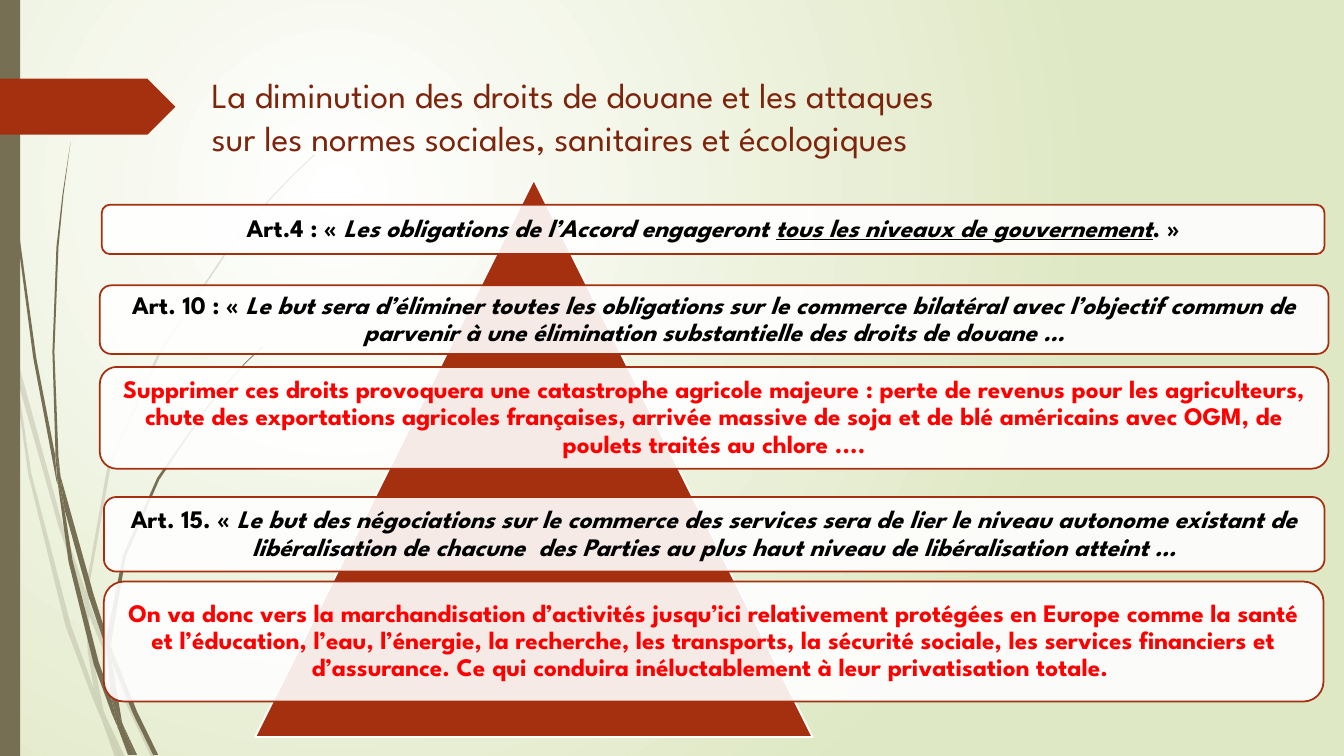
from lxml import etree
from pptx import Presentation
from pptx.dml.color import RGBColor
from pptx.enum.shapes import MSO_SHAPE
from pptx.enum.text import MSO_ANCHOR, PP_ALIGN
from pptx.oxml.ns import qn
from pptx.util import Pt

RECTANGLE = MSO_SHAPE.RECTANGLE
TRIANGLE = MSO_SHAPE.ISOSCELES_TRIANGLE
ROUNDED = MSO_SHAPE.ROUNDED_RECTANGLE
ARROW_TAB = MSO_SHAPE.PENTAGON
MIDDLE = MSO_ANCHOR.MIDDLE
CENTER = PP_ALIGN.CENTER

WHITE = RGBColor(0xFF, 0xFF, 0xFF)
BLACK = RGBColor(0x00, 0x00, 0x00)
RED = RGBColor(0xFF, 0x00, 0x00)
RUST = RGBColor(0xA5, 0x30, 0x10)
DARK_RUST = RGBColor(0x7C, 0x24, 0x0C)
OLIVE = RGBColor(0x76, 0x6F, 0x54)
PALE_GREEN = RGBColor(0xDF, 0xE8, 0xC4)

FONT = "League Spartan"
GRASS_UNIT = Pt(0.72)  # the grass outlines are on a grid of this step

# Grass blades, as outlines on the grid
PALE_BLADES = [
    [(11, 350), (9, 322), (0, 282), (0, 299), (10, 344)],
    [(58, 522), (84, 599), (85, 586), (62, 520), (14, 345), (17, 376)],
    [(92, 607), (88, 596), (88, 610), (123, 694), (150, 751), (155, 751), (127, 692)],
    [(119, 751), (124, 751), (105, 711)],
    [(93, 683), (70, 619), (31, 469), (17, 376), (11, 350), (28, 470), (65, 621),
     (92, 693), (101, 714), (99, 707)],
    [(84, 599), (87, 646), (93, 683), (96, 692), (105, 711), (103, 706), (91, 646),
     (88, 610), (88, 608)],
    [(88, 584), (110, 462), (160, 349), (229, 245), (268, 198), (290, 175), (312, 154),
     (312, 153), (289, 175), (268, 197), (228, 244), (158, 348), (107, 461), (85, 584),
     (85, 586), (88, 596)],
    [(101, 714), (114, 751), (119, 751)],
    [(88, 608), (88, 610), (88, 596), (85, 586), (84, 599)],
    [(96, 692), (93, 683), (99, 707), (101, 714), (119, 751), (105, 711)],
]
DARK_BLADES = [
    [(7, 110), (17, 233), (33, 355), (56, 477), (57, 481), (55, 457), (55, 453),
     (36, 355), (19, 232), (8, 109), (5, 48), (4, 0), (3, 0), (4, 48)],
    [(88, 592), (106, 645), (106, 633), (106, 631), (93, 590), (60, 472), (64, 505)],
    [(113, 649), (110, 641), (111, 656), (132, 708), (152, 749), (157, 749), (136, 706)],
    [(110, 691), (98, 657), (72, 556), (64, 505), (57, 477), (68, 557), (93, 659),
     (111, 708), (117, 722), (116, 717)],
    [(60, 472), (58, 453), (54, 349), (58, 245), (63, 193), (70, 141), (62, 193),
     (56, 245), (52, 349), (55, 449)],
    [(133, 749), (136, 749), (122, 719)],
    [(57, 477), (64, 505), (60, 472), (55, 449), (55, 453)],
    [(111, 633), (125, 552), (158, 476), (205, 406), (231, 374), (245, 359), (261, 344),
     (260, 344), (245, 358), (231, 373), (204, 405), (156, 474), (122, 551), (106, 631),
     (110, 641)],
    [(117, 722), (127, 749), (131, 749)],
    [(106, 645), (110, 691), (116, 706), (122, 719), (121, 716), (111, 656), (109, 651)],
    [(106, 645), (109, 651), (111, 656), (110, 641), (106, 631), (106, 633)],
    [(116, 706), (110, 691), (116, 717), (117, 722), (130, 749), (133, 749), (122, 719)],
]

# Panels: left, top, width, height, text colour, spans of text with their format
PANELS = [
    (72.7, 146.2, 873.4, 35.3, BLACK, [
        ("Art.4 : « ", {}),
        ("Les obligations de l’Accord engageront ", {"italic": True}),
        ("tous les niveaux de gouvernement", {"italic": True, "underline": True}),
        (". »", {})]),
    (71.3, 203.8, 877.7, 49, BLACK, [
        ("Art. 10 : «", {}),
        (" Le but sera d’éliminer toutes les obligations sur le commerce bilatéral avec "
         "l’objectif commun de parvenir à une élimination substantielle des droits de "
         "douane …", {"italic": True})]),
    (71.3, 262.1, 877.7, 72.7, RED, [
        ("Supprimer ces droits provoquera une catastrophe agricole majeure : perte de "
         "revenus pour les agriculteurs, chute des exportations agricoles françaises, "
         "arrivée massive de soja et de blé américains avec OGM, de poulets traités au "
         "chlore ....", {})]),
    (74.2, 355, 871.9, 53.3, BLACK, [
        ("Art. 15. «", {}),
        (" Le but des négociations sur le commerce des services sera de lier le niveau "
         "autonome existant de libéralisation de chacune  des Parties au plus haut niveau "
         "de libéralisation atteint …", {"italic": True})]),
    (74.2, 415.4, 871.2, 85.7, RED, [
        ("On va donc vers la marchandisation d’activités jusqu’ici relativement protégées "
         "en Europe comme la santé et l’éducation, l’eau, l’énergie, la recherche, les "
         "transports, la sécurité sociale, les services financiers et d’assurance. Ce qui "
         "conduira inéluctablement à leur privatisation totale. ", {})]),
]


def add_span(para, text, size=18, color=BLACK, bold=False, italic=False, underline=False):
    span = para.add_run()
    span.text = text
    font = span.font
    font.name, font.size, font.color.rgb = FONT, Pt(size), color
    font.bold, font.italic, font.underline = bold, italic, underline


class Painter:
    def __init__(self, page):
        self.page = page

    def background(self, inner, outer):
        fill = self.page.background.fill
        fill.gradient()
        for stop, color, position in zip(fill.gradient_stops, (inner, outer), (0, 1)):
            stop.color.rgb, stop.position = color, position
        gradient = self.page.background._cSld.find(".//" + qn("a:gradFill"))
        gradient.remove(gradient.find(qn("a:lin")))
        circle = etree.SubElement(gradient, qn("a:path"), {"path": "circle"})
        etree.SubElement(circle, qn("a:fillToRect"),
                         {"l": "50000", "t": "50000", "r": "100000", "b": "100000"})

    def paint(self, shape, color, line=None, opacity=100):
        shape.shadow.inherit = False
        shape.fill.solid()
        shape.fill.fore_color.rgb = color
        if opacity < 100:
            tint = shape.fill._xPr.find(".//" + qn("a:srgbClr"))
            etree.SubElement(tint, qn("a:alpha"), {"val": str(opacity * 1000)})
        if line is None:
            shape.line.fill.background()
        else:
            shape.line.color.rgb = line
            shape.line.width = Pt(1.25)

    def shape(self, kind, left, top, width, height, color, **style):
        shape = self.page.shapes.add_shape(kind, Pt(left), Pt(top), Pt(width), Pt(height))
        self.paint(shape, color, **style)
        return shape

    def blade(self, outline, opacity):
        builder = self.page.shapes.build_freeform(*outline[0], scale=GRASS_UNIT)
        builder.add_line_segments(outline[1:], close=True)
        self.paint(builder.convert_to_shape(), OLIVE, opacity=opacity)

    def title(self, left, top, width, height, lines):
        box = self.page.shapes.add_textbox(Pt(left), Pt(top), Pt(width), Pt(height))
        box.text_frame.word_wrap = True
        para = box.text_frame.paragraphs[0]
        add_span(para, lines[0], size=25.2, color=DARK_RUST)
        para.add_line_break()
        add_span(para, lines[1], size=25.2, color=DARK_RUST)

    def panel(self, left, top, width, height, color, spans):
        box = self.shape(ROUNDED, left, top, width, height, WHITE, line=RUST, opacity=90)
        frame = box.text_frame
        frame.word_wrap = True
        frame.vertical_anchor = MIDDLE
        frame.margin_left = frame.margin_right = Pt(5)
        frame.margin_top = frame.margin_bottom = Pt(5)
        para = frame.paragraphs[0]
        para.alignment = CENTER
        para.line_spacing = 0.9
        for text, style in spans:
            add_span(para, text, color=color, bold=True, **style)


def main():
    deck = Presentation()
    deck.slide_width, deck.slide_height = Pt(960), Pt(540)
    painter = Painter(deck.slides.add_slide(deck.slide_layouts[6]))

    # Background and grass
    painter.background(WHITE, PALE_GREEN)
    for blades, opacity in ((PALE_BLADES, 20), (DARK_BLADES, 100)):
        for outline in blades:
            painter.blade(outline, opacity)

    # Side bar, arrow tab and title
    painter.shape(RECTANGLE, 0, 0, 14.4, 540, OLIVE)
    painter.shape(ARROW_TAB, 0, 56.2, 125.3, 40, RUST)
    painter.title(144, 49, 761.8, 67.7,
                  ["La diminution des droits de douane et les attaques ",
                   "sur les normes sociales, sanitaires et écologiques"])

    # Pyramid and its panels
    painter.shape(TRIANGLE, 182.2, 128.2, 398.2, 398.2, RUST, line=WHITE)
    for panel in PANELS:
        painter.panel(*panel)

    deck.save("out.pptx")


if __name__ == "__main__":
    main()
